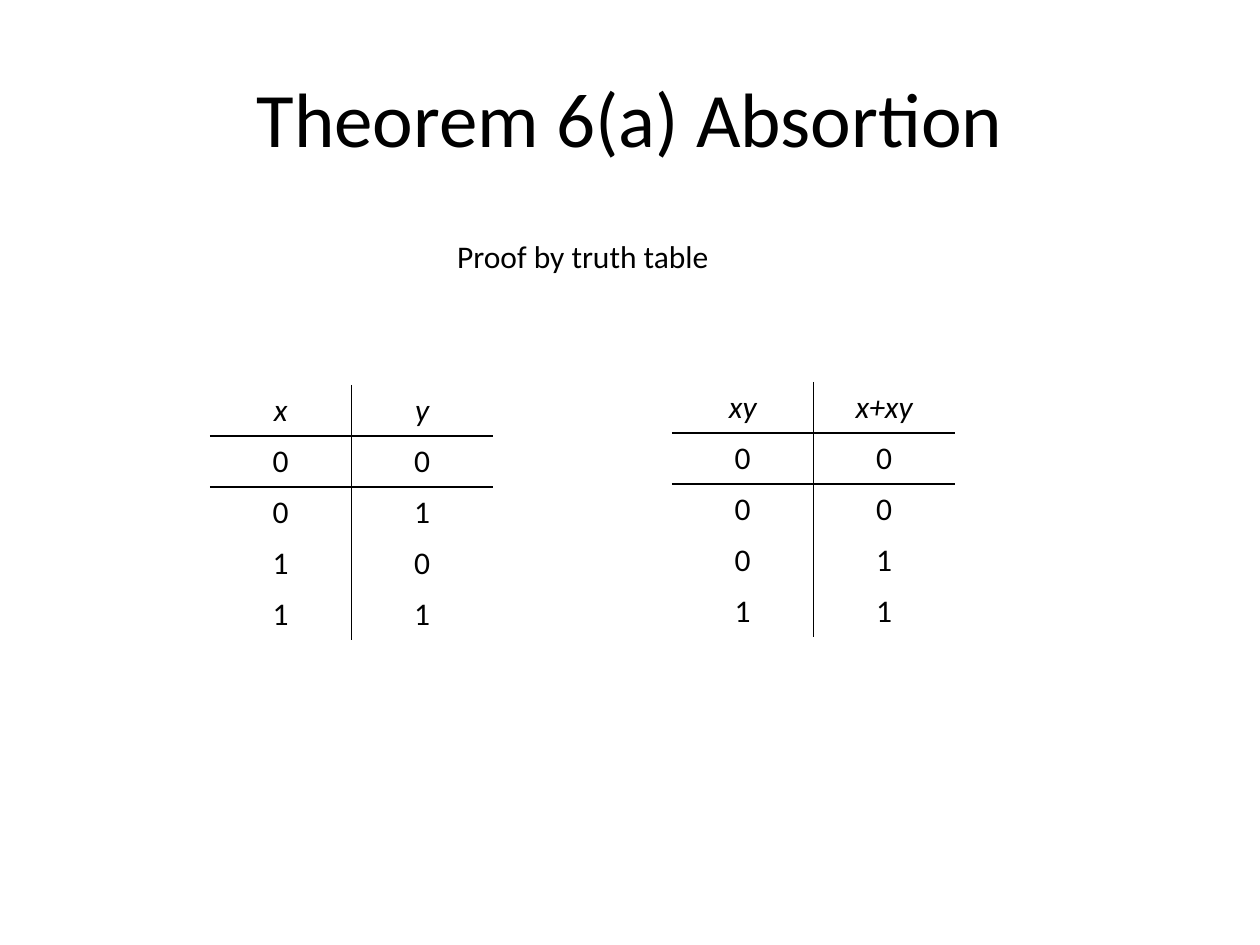
import lxml.etree
import pptx
import pptx.dml.color
import pptx.enum.text
import pptx.oxml.ns
import pptx.util

SCALE = 914400 // 126
FONT = "Calibri"
COLORS = {"ink": "000000", "page": "FFFFFF"}
CENTER = pptx.enum.text.PP_ALIGN.CENTER
MIDDLE = pptx.enum.text.MSO_ANCHOR.MIDDLE
TOP = pptx.enum.text.MSO_ANCHOR.TOP


def px(*sizes):
    return [pptx.util.Emu(size * SCALE) for size in sizes]


def color(name):
    return pptx.dml.color.RGBColor.from_string(COLORS[name])


def write(frame, text, size, italic=False):
    para = frame.paragraphs[0]
    para.text = text
    para.alignment = CENTER
    para.font.name = FONT
    para.font.size = pptx.util.Pt(size)
    para.font.italic = italic
    para.font.color.rgb = color("ink")


def label(slide, box, text, size, anchor):
    frame = slide.shapes.add_textbox(*px(*box)).text_frame
    frame.word_wrap = True
    frame.vertical_anchor = anchor
    write(frame, text, size)


def border(cell, sides):
    props = cell._tc.get_or_add_tcPr()
    for place, side in enumerate("LRTB"):
        line = lxml.etree.Element(pptx.oxml.ns.qn("a:ln" + side), w="12700")
        if side in sides:
            fill = lxml.etree.SubElement(line, pptx.oxml.ns.qn("a:solidFill"))
            lxml.etree.SubElement(fill, pptx.oxml.ns.qn("a:srgbClr"), val=COLORS["ink"])
        else:
            lxml.etree.SubElement(line, pptx.oxml.ns.qn("a:noFill"))
        props.insert(place, line)


def truth(slide, box, rows):
    table = slide.shapes.add_table(len(rows), len(rows[0]), *px(*box)).table
    table.first_row = table.horz_banding = False
    for r, row in enumerate(rows):
        for c, text in enumerate(row):
            cell = table.cell(r, c)
            cell.fill.background()
            write(cell.text_frame, text, 18, italic=r == 0)
            sides = "R" if c == 0 else "L"
            if r in (0, 1):
                sides += "B"
            if r in (1, 2):
                sides += "T"
            border(cell, sides)


def main():
    deck = pptx.Presentation()
    deck.slide_width, deck.slide_height = px(1260, 945)
    slide = deck.slides.add_slide(deck.slide_layouts[6])
    slide.background.fill.solid()
    slide.background.fill.fore_color.rgb = color("page")
    label(slide, (63, 38, 1134, 158), "Theorem 6(a) Absortion", 44, MIDDLE)
    truth(slide, (210, 385, 283, 255), ["xy", "00", "01", "10", "11"])
    truth(slide, (672, 382, 283, 255), [("xy", "x+xy"), "00", "00", "01", "11"])
    label(slide, (336, 231, 494, 50), "Proof by truth table", 18, TOP)
    deck.save("out.pptx")


if __name__ == "__main__":
    main()
